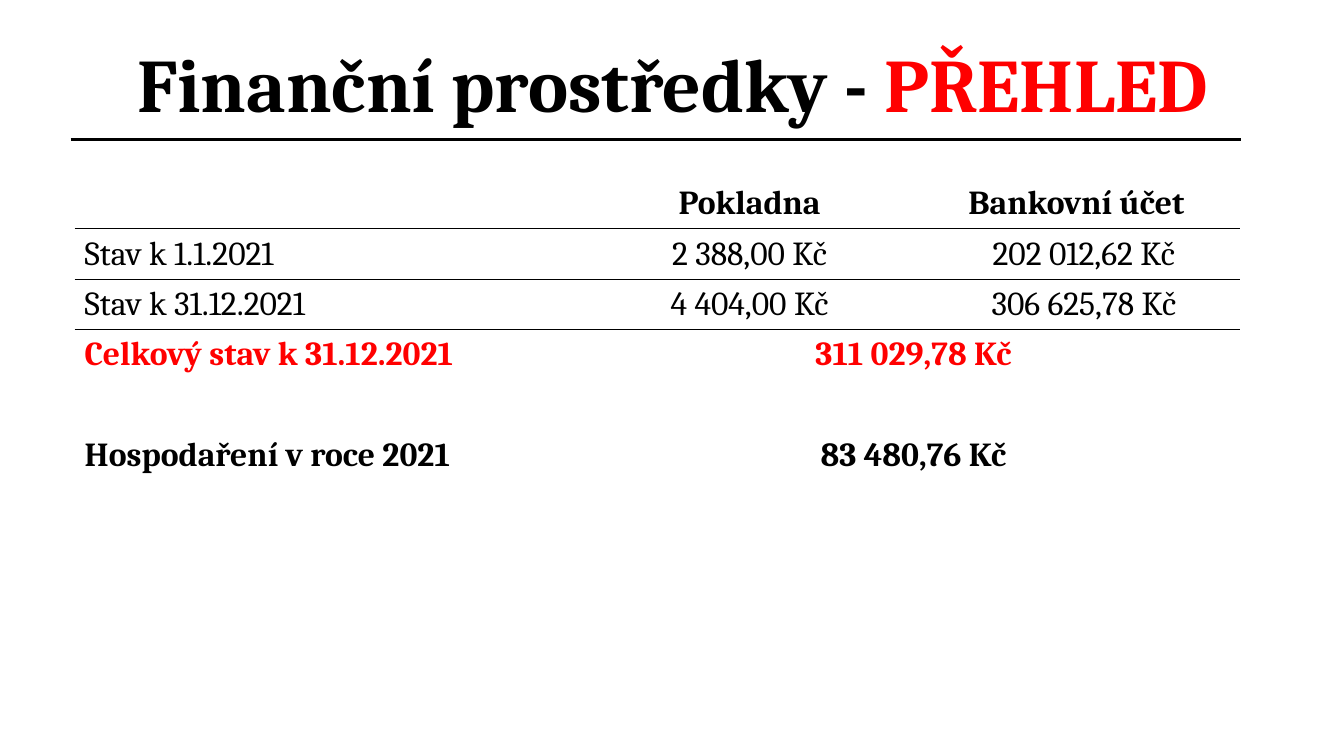
from dataclasses import dataclass

from lxml.etree import SubElement
from pptx import Presentation
from pptx.dml.color import RGBColor
from pptx.enum.shapes import MSO_CONNECTOR as Connector
from pptx.enum.text import MSO_ANCHOR as Anchor, PP_ALIGN as Align
from pptx.oxml import parse_xml
from pptx.oxml.ns import nsdecls, qn
from pptx.util import Inches, Pt


@dataclass(frozen=True)
class Theme:
    font: str = "Cambria"
    ink: str = "000000"
    accent: str = "FF0000"
    title_size: int = 54
    body_size: int = 24
    plain_table: str = "{2D5ABB26-0587-4C30-8999-92F81FD0307C}"


class SlideBuilder:
    def __init__(self, slide, theme):
        self.slide = slide
        self.theme = theme

    def style(self, font, size, color, bold):
        font.name = self.theme.font
        font.size = Pt(size)
        font.bold = bold
        font.color.rgb = RGBColor.from_string(color)

    def title(self, left, top, width, height, parts):
        heading = self.slide.shapes.add_textbox(
            Inches(left), Inches(top), Inches(width), Inches(height))
        frame = heading.text_frame
        frame.word_wrap = True
        frame.vertical_anchor = Anchor.MIDDLE
        paragraph = frame.paragraphs[0]
        paragraph.alignment = Align.CENTER
        paragraph.line_spacing = 0.9
        for words, color in parts:
            run = paragraph.add_run()
            run.text = words
            self.style(run.font, self.theme.title_size, color, True)

    def rule(self, left, right, y, weight):
        divider = self.slide.shapes.add_connector(
            Connector.STRAIGHT, Inches(left), Inches(y), Inches(right), Inches(y))
        divider.line.color.rgb = RGBColor.from_string(self.theme.ink)
        divider.line.width = Pt(weight)
        SubElement(divider._element.spPr, qn("a:effectLst"))

    def table(self, left, top, columns, row_height, row_count):
        frame = self.slide.shapes.add_table(
            row_count, len(columns), Inches(left), Inches(top),
            Inches(sum(columns)), Inches(row_height * row_count))
        grid = frame.table
        grid.first_row = grid.horz_banding = False
        grid._tbl.tblPr.find(qn("a:tableStyleId")).text = self.theme.plain_table
        for column, width in zip(grid.columns, columns):
            column.width = Inches(width)
        for cell in grid.iter_cells():
            cell.fill.background()
        return grid

    def cell(self, cell, words, align, color, bold):
        cell.text = words
        cell.vertical_anchor = Anchor.MIDDLE
        paragraph = cell.text_frame.paragraphs[0]
        paragraph.alignment = align
        self.style(paragraph.font, self.theme.body_size, color, bold)

    def border(self, cell, side, weight):
        cell._tc.get_or_add_tcPr().insert(0, parse_xml(
            f'<a:ln{side} {nsdecls("a")} w="{Pt(weight)}"><a:solidFill>'
            f'<a:srgbClr val="{self.theme.ink}"/></a:solidFill></a:ln{side}>'))


def main():
    theme = Theme()
    presentation = Presentation()
    presentation.slide_width = Inches(13.33)
    presentation.slide_height = Inches(7.5)
    slide = presentation.slides.add_slide(presentation.slide_layouts[6])
    builder = SlideBuilder(slide, theme)

    builder.title(0.92, 0.4, 11.5, 0.94,
                  [("Finanční prostředky - ", theme.ink), ("PŘEHLED", theme.accent)])
    builder.rule(0.7, 12.31, 1.38, 2)

    balances = [
        (["", "Pokladna", "Bankovní účet"], theme.ink, True),
        (["Stav k 1.1.2021", "2 388,00 Kč", "202 012,62 Kč"], theme.ink, False),
        (["Stav k 31.12.2021", "4 404,00 Kč", "306 625,78 Kč"], theme.ink, False),
        (["Celkový stav k 31.12.2021", "311 029,78 Kč"], theme.accent, True),
        ([""], theme.ink, True),
        (["Hospodaření v roce 2021", "83 480,76 Kč"], theme.ink, True),
    ]
    overview = builder.table(0.74, 1.77, [5.08, 3.23, 3.25], 0.48, len(balances))
    for row, (entries, color, bold) in enumerate(balances):
        for column, words in enumerate(entries):
            align = Align.CENTER if column else Align.LEFT
            builder.cell(overview.cell(row, column), words, align, color, bold)
        if len(entries) == 2:
            overview.cell(row, 1).merge(overview.cell(row, 2))

    for row in (1, 2):
        overview.cell(row, 2).margin_left = Inches(0.25)
        for column in range(3):
            builder.border(overview.cell(row - 1, column), "B", 1)
            builder.border(overview.cell(row, column), "T", 1)

    presentation.save("out.pptx")


if __name__ == "__main__":
    main()
